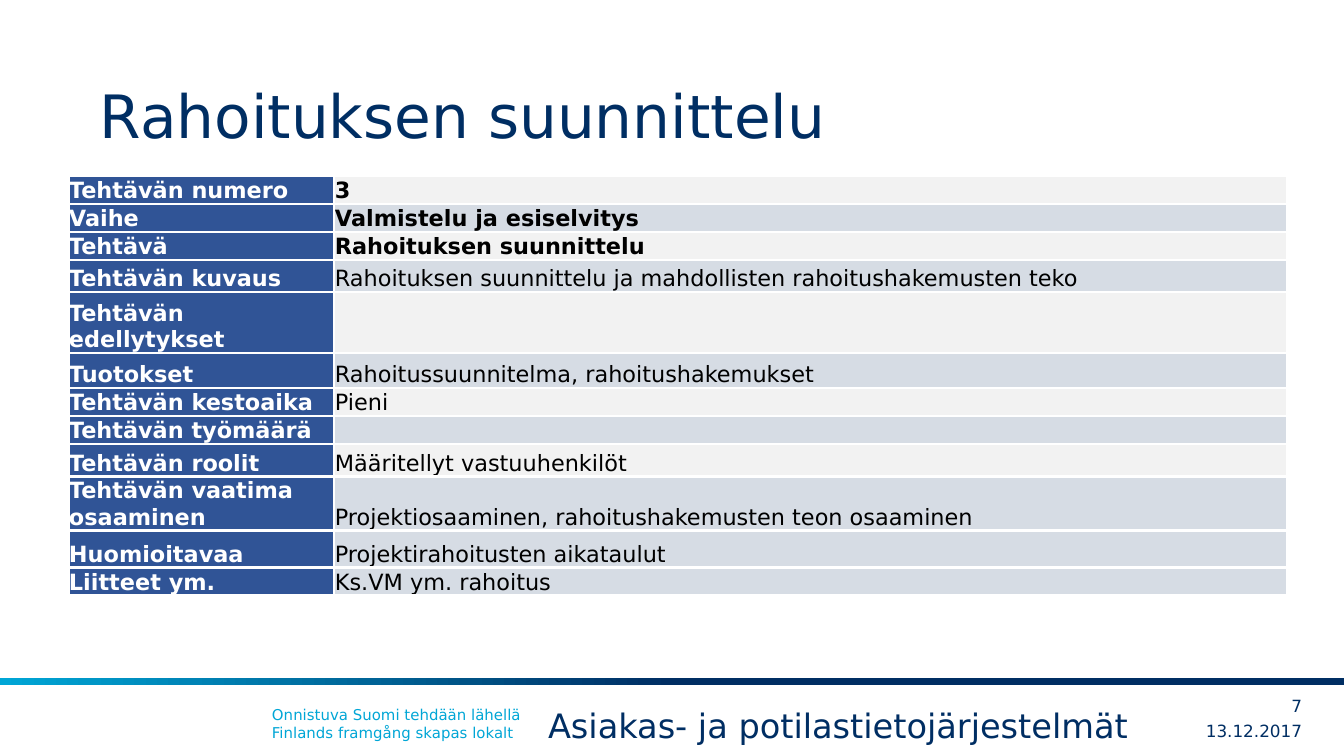
from dataclasses import dataclass

from lxml import etree
from pptx import Presentation
from pptx.dml.color import RGBColor
from pptx.enum import shapes, text
from pptx.oxml import ns
from pptx.util import Pt

PX = 914400 / 134.4


@dataclass(frozen=True)
class Theme:
    font: str = "DejaVu Sans"
    navy: str = "002E63"
    cyan: str = "00A6D6"
    label: str = "305496"
    light: str = "F2F2F2"
    band: str = "D6DCE4"
    white: str = "FFFFFF"
    black: str = "000000"
    title_size: int = 32
    project_size: int = 18
    table_size: int = 12
    small_size: int = 9
    slogan_size: int = 8
    border: float = 1.5


THEME = Theme()

ROWS = [
    ("Tehtävän numero", "3", 28, THEME.light, True),
    ("Vaihe", "Valmistelu ja esiselvitys", 28, THEME.band, True),
    ("Tehtävä", "Rahoituksen suunnittelu", 28, THEME.light, True),
    ("Tehtävän kuvaus", "Rahoituksen suunnittelu ja mahdollisten rahoitushakemusten teko",
     32, THEME.band, False),
    ("Tehtävän edellytykset", "", 61, THEME.light, False),
    ("Tuotokset", "Rahoitussuunnitelma, rahoitushakemukset", 35, THEME.band, False),
    ("Tehtävän kestoaika", "Pieni", 27, THEME.light, False),
    ("Tehtävän työmäärä", "", 28, THEME.band, False),
    ("Tehtävän roolit", "Määritellyt vastuuhenkilöt", 33, THEME.light, False),
    ("Tehtävän vaatima osaaminen", "Projektiosaaminen, rahoitushakemusten teon osaaminen",
     53, THEME.band, False),
    ("Huomioitavaa", "Projektirahoitusten aikataulut", 37, THEME.band, False),
    ("Liitteet ym.", "Ks.VM ym. rahoitus", 28, THEME.band, False),
]


def px(length):
    return round(length * PX)


def color(value):
    return RGBColor.from_string(value)


def style(font, size, ink, bold=False):
    font.name = THEME.font
    font.size = Pt(size)
    font.bold = bold
    font.color.rgb = color(ink)


def add_text(page, area, lines, size, ink, insets=(13, 7),
             align=text.PP_ALIGN.LEFT, anchor=text.MSO_ANCHOR.TOP, wrap=True):
    frame = page.shapes.add_textbox(*map(px, area)).text_frame
    frame.word_wrap = wrap
    frame.vertical_anchor = anchor
    frame.margin_left = frame.margin_right = px(insets[0])
    frame.margin_top = frame.margin_bottom = px(insets[1])
    para = frame.paragraphs[0]
    para.alignment = align
    for index, line in enumerate(lines):
        if index:
            para.add_line_break()
        span = para.add_run()
        span.text = line
        style(span.font, size, ink)


def add_footer_bar(page):
    bar = page.shapes.add_shape(shapes.MSO_SHAPE.RECTANGLE, *map(px, (0, 678, 1344, 7)))
    bar.shadow.inherit = False
    bar.line.fill.background()
    bar.fill.gradient()
    bar.fill.gradient_angle = 180
    stops = zip(bar.fill.gradient_stops, ((0.5, THEME.navy), (1, THEME.cyan)))
    for stop, (position, ink) in stops:
        stop.position = position
        stop.color.rgb = color(ink)


def add_borders(cell):
    properties = cell._tc.get_or_add_tcPr()
    for index, side in enumerate(("lnL", "lnR", "lnT", "lnB")):
        line = etree.Element(ns.qn(f"a:{side}"), w=str(Pt(THEME.border)))
        fill = etree.SubElement(line, ns.qn("a:solidFill"))
        etree.SubElement(fill, ns.qn("a:srgbClr"), val=THEME.white)
        properties.insert(index, line)


def fill_cell(cell, words, background, ink, bold, inset):
    cell.fill.solid()
    cell.fill.fore_color.rgb = color(background)
    add_borders(cell)
    cell.vertical_anchor = text.MSO_ANCHOR.BOTTOM
    cell.margin_left = cell.margin_right = cell.margin_top = px(inset)
    cell.margin_bottom = 0
    para = cell.text_frame.paragraphs[0]
    if words:
        span = para.add_run()
        span.text = words
        style(span.font, THEME.table_size, ink, bold)
    else:
        para.font.size = Pt(THEME.table_size)


def add_task_table(page):
    height = sum(row[2] for row in ROWS)
    frame = page.shapes.add_table(len(ROWS), 2, *map(px, (69, 176, 1218, height)))
    table = frame.table
    table.first_row = table.horz_banding = False
    for column, width in zip(table.columns, (265, 953)):
        column.width = px(width)
    for index, (label, value, row_height, background, bold) in enumerate(ROWS):
        table.rows[index].height = px(row_height)
        fill_cell(table.cell(index, 0), label, THEME.label, THEME.white, True, 0)
        fill_cell(table.cell(index, 1), value, background, THEME.black, bold, 1)


def main():
    deck = Presentation()
    deck.slide_width, deck.slide_height = px(1344), px(756)
    page = deck.slides.add_slide(deck.slide_layouts[6])
    add_footer_bar(page)
    add_text(page, (259, 699, 879, 50),
             ("Onnistuva Suomi tehdään lähellä", "Finlands framgång skapas lokalt"),
             THEME.slogan_size, THEME.cyan)
    for area, words in (((1169, 716, 133, 30), "13.12.2017"), ((1244, 691, 58, 30), "7")):
        add_text(page, area, (words,), THEME.small_size, THEME.navy, insets=(0, 0),
                 align=text.PP_ALIGN.RIGHT, anchor=text.MSO_ANCHOR.MIDDLE)
    add_text(page, (100, 31, 1144, 126), ("Rahoituksen suunnittelu",),
             THEME.title_size, THEME.navy, insets=(0, 7), anchor=text.MSO_ANCHOR.BOTTOM)
    add_task_table(page)
    add_text(page, (535, 698, 622, 54), ("Asiakas- ja potilastietojärjestelmät",),
             THEME.project_size, THEME.navy, wrap=False)
    deck.save("out.pptx")


if __name__ == "__main__":
    main()
